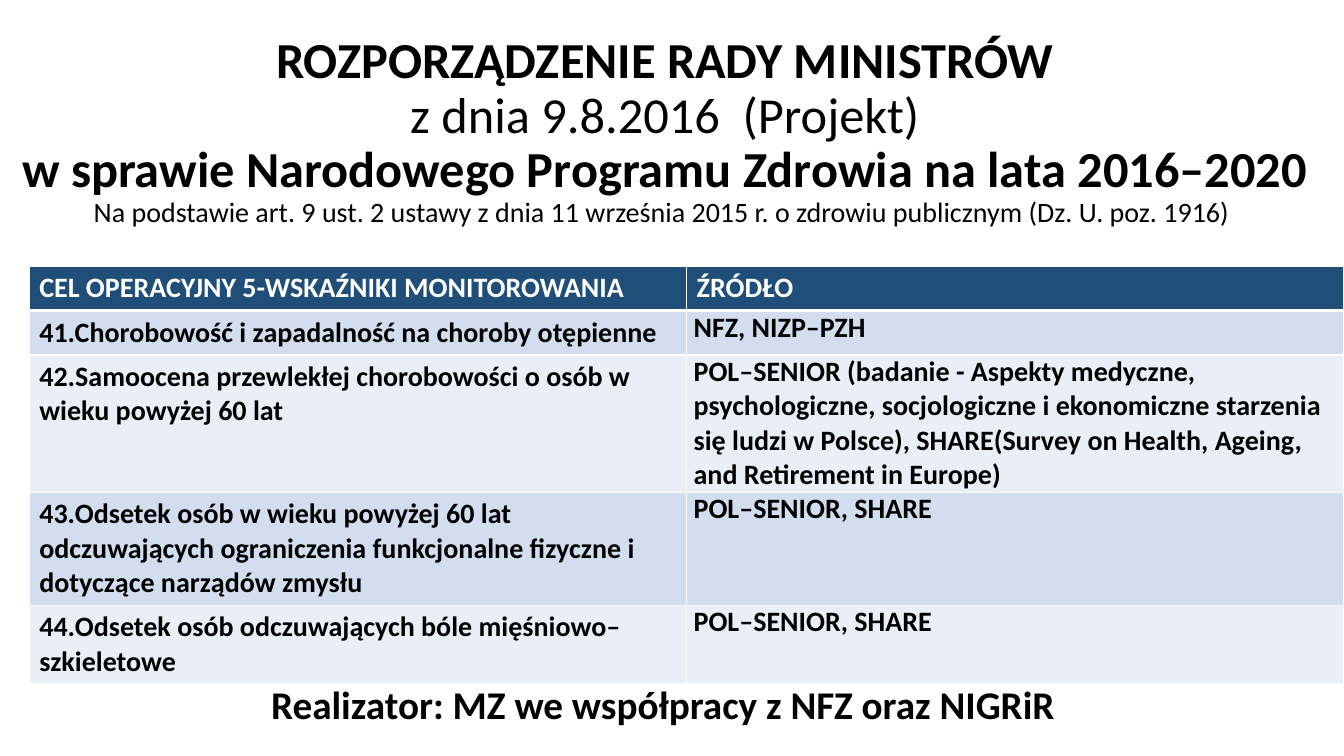
import pptx
import pptx.dml.color
import pptx.enum.text
import pptx.oxml.ns
import pptx.util
from lxml import etree

RGBColor = pptx.dml.color.RGBColor
Inches = pptx.util.Inches
Pt = pptx.util.Pt
PP_ALIGN = pptx.enum.text.PP_ALIGN

BLACK = RGBColor(0x00, 0x00, 0x00)
WHITE = RGBColor(0xFF, 0xFF, 0xFF)
NAVY = RGBColor(0x1F, 0x4E, 0x79)
BANDS = [RGBColor(0xD2, 0xDE, 0xEF), RGBColor(0xEA, 0xEF, 0xF7)]
FONT = "Calibri"

# Text, size and weight of each title line
TITLE_LINES = [
    ("ROZPORZĄDZENIE RADY MINISTRÓW", 36, True),
    ("z dnia 9.8.2016  (Projekt)", 36, False),
    ("w sprawie Narodowego Programu Zdrowia na lata 2016–2020", 36, True),
    ("Na podstawie art. 9 ust. 2 ustawy z dnia 11 września 2015 r. "
     "o zdrowiu publicznym (Dz. U. poz. 1916) ", 20, False),
]
INDICATORS = [
    ("CEL OPERACYJNY 5-WSKAŹNIKI MONITOROWANIA", "ŹRÓDŁO"),
    ("41.Chorobowość i zapadalność na choroby otępienne", "NFZ, NIZP–PZH"),
    ("42.Samoocena przewlekłej chorobowości o osób w wieku powyżej 60 lat",
     "POL–SENIOR (badanie - Aspekty medyczne, psychologiczne, socjologiczne "
     "i ekonomiczne starzenia się ludzi w Polsce), SHARE(Survey on Health, "
     "Ageing, and Retirement in Europe)"),
    ("43.Odsetek osób w wieku powyżej 60 lat odczuwających ograniczenia "
     "funkcjonalne fizyczne i dotyczące narządów zmysłu", "POL–SENIOR, SHARE"),
    ("44.Odsetek osób odczuwających bóle mięśniowo–szkieletowe",
     "POL–SENIOR, SHARE"),
]
ROW_HEIGHTS = [0.43, 0.43, 1.36, 1.12, 0.78]


def format_run(run, size, color, bold=True):
    run.font.name = FONT
    run.font.size = Pt(size)
    run.font.bold = bold
    run.font.color.rgb = color


def add_title(slide, left, top, width, height):
    title = slide.shapes.title
    title.left, title.top = Inches(left), Inches(top)
    title.width, title.height = Inches(width), Inches(height)
    frame = title.text_frame
    frame.auto_size = pptx.enum.text.MSO_AUTO_SIZE.NONE
    frame.vertical_anchor = pptx.enum.text.MSO_ANCHOR.MIDDLE
    frame.text = "\v".join(text for text, size, bold in TITLE_LINES)
    paragraph = frame.paragraphs[0]
    paragraph.alignment = PP_ALIGN.CENTER
    paragraph.line_spacing = 0.9
    for run, (text, size, bold) in zip(paragraph.runs, TITLE_LINES):
        format_run(run, size, BLACK, bold)


def set_borders(cell, bottom_width):
    properties = cell._tc.get_or_add_tcPr()
    widths = {"a:lnL": 1, "a:lnR": 1, "a:lnT": 1, "a:lnB": bottom_width}
    for tag, width in widths.items():
        line = etree.SubElement(properties, pptx.oxml.ns.qn(tag), w=str(Pt(width)))
        fill = etree.SubElement(line, pptx.oxml.ns.qn("a:solidFill"))
        etree.SubElement(fill, pptx.oxml.ns.qn("a:srgbClr"), val=str(WHITE))


def add_indicator_table(slide, left, top, width):
    table = slide.shapes.add_table(
        len(INDICATORS), 2, Inches(left), Inches(top),
        Inches(width), Inches(sum(ROW_HEIGHTS))).table
    for row_index, texts in enumerate(INDICATORS):
        is_header = row_index == 0
        table.rows[row_index].height = Inches(ROW_HEIGHTS[row_index])
        for column_index, text in enumerate(texts):
            cell = table.cell(row_index, column_index)
            cell.text = text
            format_run(cell.text_frame.paragraphs[0].runs[0], 20,
                       WHITE if is_header else BLACK)
            # Source cells below the header have tight margins
            if column_index == 1 and not is_header:
                cell.margin_left = cell.margin_right = Inches(0.07)
                cell.margin_top = cell.margin_bottom = 0
            set_borders(cell, 3 if is_header else 1)
            cell.fill.solid()
            cell.fill.fore_color.rgb = NAVY if is_header else BANDS[(row_index - 1) % 2]


def add_executor(slide, left, top, width, height):
    box = slide.shapes.add_textbox(
        Inches(left), Inches(top), Inches(width), Inches(height))
    frame = box.text_frame
    frame.word_wrap = False
    frame.auto_size = pptx.enum.text.MSO_AUTO_SIZE.SHAPE_TO_FIT_TEXT
    frame.text = "Realizator: MZ we współpracy z NFZ oraz NIGRiR"
    paragraph = frame.paragraphs[0]
    paragraph.alignment = PP_ALIGN.JUSTIFY
    paragraph.line_spacing = 1.5
    # Hanging indent
    properties = paragraph._p.get_or_add_pPr()
    properties.set("marL", str(Inches(0.68)))
    properties.set("indent", str(Inches(-0.33)))
    format_run(paragraph.runs[0], 28, BLACK)


def main():
    presentation = pptx.Presentation()
    presentation.slide_width = Inches(13.33)
    presentation.slide_height = Inches(7.5)
    slide = presentation.slides.add_slide(presentation.slide_layouts[5])
    add_title(slide, 0, 0, 13.19, 2.62)
    add_indicator_table(slide, 0.29, 2.64, 13.04)
    add_executor(slide, 2.24, 6.47, 8.42, 0.73)
    presentation.save("out.pptx")


if __name__ == "__main__":
    main()
